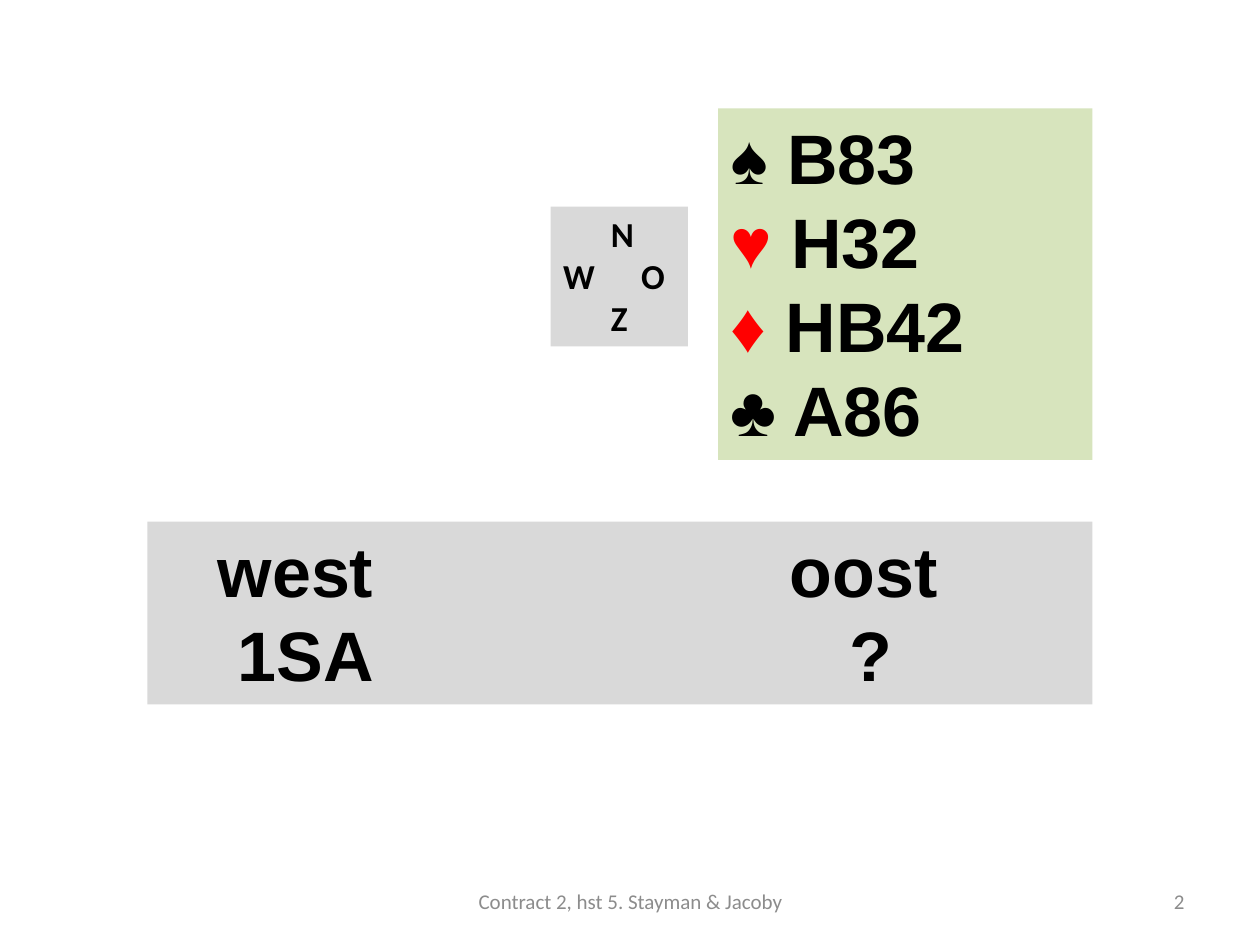
from lxml.etree import SubElement
from pptx import Presentation
from pptx.dml.color import RGBColor
from pptx.enum.shapes import MSO_SHAPE
from pptx.enum.text import MSO_ANCHOR, PP_ALIGN
from pptx.oxml.ns import qn
from pptx.util import Inches, Pt

BLACK = RGBColor(0x00, 0x00, 0x00)
RED = RGBColor(0xFF, 0x00, 0x00)
GRAY = RGBColor(0x8C, 0x8C, 0x8C)
PANEL = RGBColor(0xD9, 0xD9, 0xD9)
GREEN = RGBColor(0xD7, 0xE4, 0xBD)

HAND = [
    ("♠", "B83", BLACK, "Times New Roman"),
    ("♥", "H32", RED, "Arial"),
    ("♦", "HB42", RED, "Arial"),
    ("♣", "A86", BLACK, "Arial"),
]
COMPASS = [("\tN", [0.38]), ("W\tO", [0.62]), ("\tZ", [0.38])]
BIDDING = [("\twest\toost", [0.46, 5]), ("\t1SA\t?", [0.62, 5.47])]


def add_text(para, text, font="Arial", size=40, color=BLACK, bold=True):
    span = para.add_run()
    span.text = text
    span.font.name = font
    span.font.size = Pt(size)
    span.font.bold = bold
    span.font.color.rgb = color


def add_paragraphs(frame, count):
    while len(frame.paragraphs) < count:
        frame.add_paragraph()
    return frame.paragraphs


def add_panel(page, place, fill):
    box = page.shapes.add_shape(MSO_SHAPE.RECTANGLE, *map(Inches, place))
    box.shadow.inherit = False
    box.fill.solid()
    box.fill.fore_color.rgb = fill
    box.line.fill.background()
    box.text_frame.word_wrap = True
    box.text_frame.vertical_anchor = MSO_ANCHOR.TOP
    return box.text_frame


def set_tabs(para, stops):
    tabs = SubElement(para._p.get_or_add_pPr(), qn("a:tabLst"))
    for stop in stops:
        SubElement(tabs, qn("a:tab"), pos=str(Inches(stop)), algn="l")


def add_hand(page, place):
    frame = add_panel(page, place, GREEN)
    for para, (suit, cards, color, font) in zip(add_paragraphs(frame, len(HAND)), HAND):
        para.alignment = PP_ALIGN.LEFT
        add_text(para, suit, font=font, color=color)
        add_text(para, f" {cards}")


def add_tabbed_panel(page, place, rows, **text_format):
    frame = add_panel(page, place, PANEL)
    for para, (text, stops) in zip(add_paragraphs(frame, len(rows)), rows):
        para.alignment = PP_ALIGN.LEFT
        set_tabs(para, stops)
        add_text(para, text, **text_format)


def add_footer(page, left, width, text, alignment):
    box = page.shapes.add_textbox(*map(Inches, (left, 6.95, width, 0.4)))
    frame = box.text_frame
    frame.word_wrap = True
    frame.vertical_anchor = MSO_ANCHOR.MIDDLE
    para = frame.paragraphs[0]
    para.alignment = alignment
    add_text(para, text, font="Calibri", size=12, color=GRAY, bold=False)


def main():
    deck = Presentation()
    deck.slide_width = Inches(10)
    deck.slide_height = Inches(7.5)
    page = deck.slides.add_slide(deck.slide_layouts[6])
    add_hand(page, (5.7, 0.86, 2.97, 2.79))
    add_tabbed_panel(page, (4.37, 1.64, 1.09, 1.11), COMPASS, font="Calibri", size=20)
    add_tabbed_panel(page, (1.17, 4.14, 7.5, 1.45), BIDDING)
    add_footer(page, 7.17, 2.33, "2", PP_ALIGN.RIGHT)
    add_footer(page, 3.42, 3.17, "Contract 2, hst 5. Stayman & Jacoby", PP_ALIGN.CENTER)
    deck.save("out.pptx")


if __name__ == "__main__":
    main()
